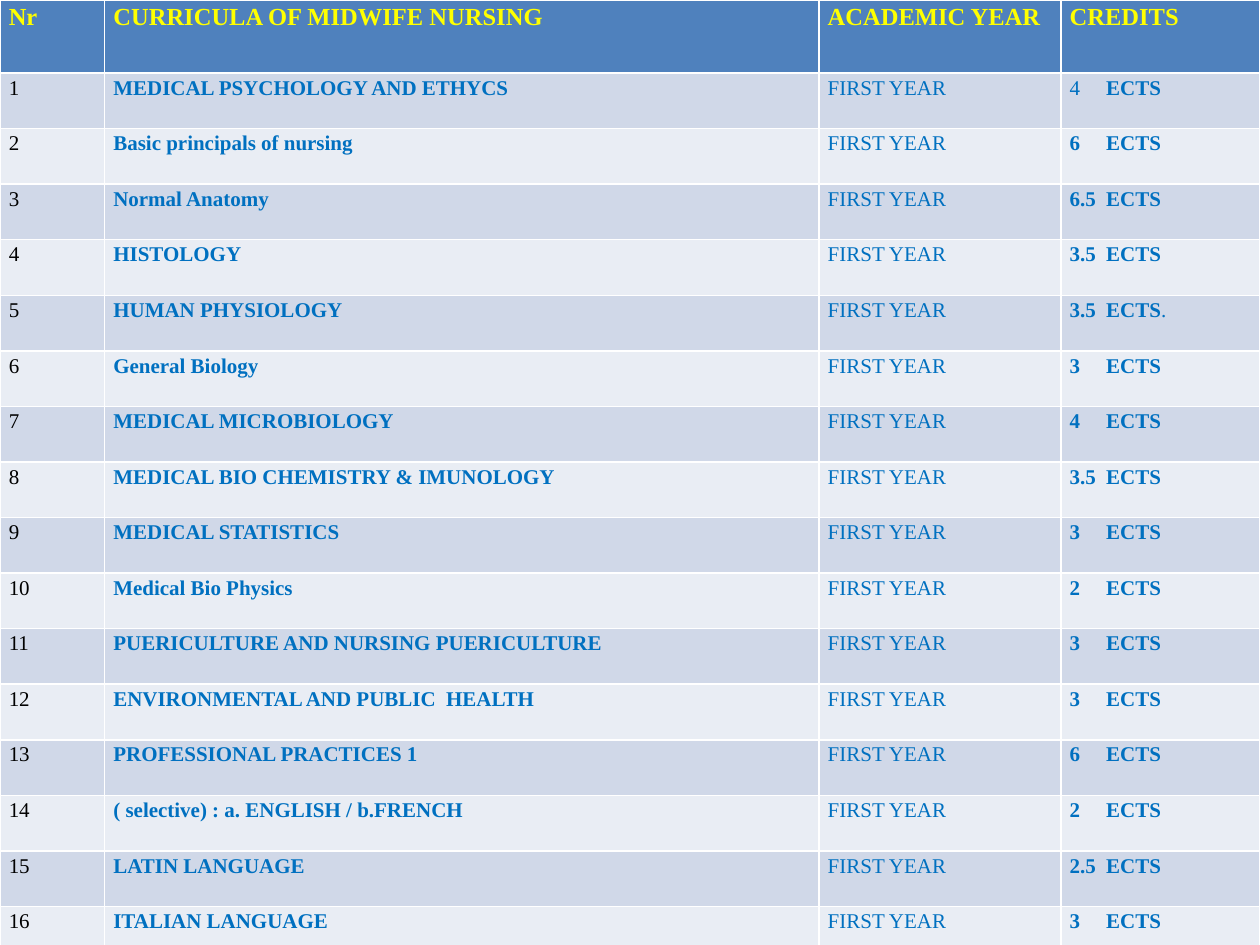
from lxml import etree
from pptx import Presentation
from pptx import util as u
from pptx.dml.color import RGBColor
from pptx.oxml.ns import qn

HEADERS = ["Nr", "CURRICULA OF MIDWIFE NURSING", "ACADEMIC YEAR", "CREDITS"]
YEAR = "FIRST YEAR"
COURSES = [
    ("MEDICAL PSYCHOLOGY AND ETHYCS", "4"),
    ("Basic principals of nursing", "6"),
    ("Normal Anatomy", "6.5"),
    ("HISTOLOGY", "3.5"),
    ("HUMAN PHYSIOLOGY", "3.5"),
    ("General Biology", "3"),
    ("MEDICAL MICROBIOLOGY", "4"),
    ("MEDICAL BIO CHEMISTRY & IMUNOLOGY", "3.5"),
    ("MEDICAL STATISTICS", "3"),
    ("Medical Bio Physics", "2"),
    ("PUERICULTURE AND NURSING PUERICULTURE", "3"),
    ("ENVIRONMENTAL AND PUBLIC  HEALTH", "3"),
    ("PROFESSIONAL PRACTICES 1", "6"),
    ("( selective) : a. ENGLISH / b.FRENCH", "2"),
    ("LATIN LANGUAGE", "2.5"),
    ("ITALIAN LANGUAGE", "3"),
]
# Credits set in mixed weight, by course number: (text, bold) spans
MIXED_CREDITS = {
    1: [("4", False), ("\tECTS", True)],
    5: [("3.5\tECTS", True), (".", False)],
}
COLORS = {"header": "4F81BD", "header_text": "FFFF00", "odd": "D0D8E8",
          "even": "E9EDF4", "number": "000000", "body": "0070C0"}
FONT = "Times New Roman"
COLUMN_WIDTHS = [0.83, 5.67, 1.92, 1.58]
TABLE_HEIGHT, HEADER_HEIGHT = 7.64, 0.58
UNIT_TAB = 0.29


def color(name):
    return RGBColor.from_string(COLORS[name])


def fill_cell(cell, spans, size, text_color, background):
    """Write (text, bold) spans into a cell and format it."""
    cell.margin_left = cell.margin_right = u.Inches(0.07)
    cell.margin_top = cell.margin_bottom = 0
    cell.fill.solid()
    cell.fill.fore_color.rgb = color(background)
    para = cell.text_frame.paragraphs[0]
    para.line_spacing = 1.15
    for words, bold in spans:
        span = para.add_run()
        span.text = words
        span.font.name = FONT
        span.font.size = u.Pt(size)
        span.font.bold = bold
        span.font.color.rgb = color(text_color)


def add_tab_stop(cell, position):
    properties = cell.text_frame.paragraphs[0]._p.get_or_add_pPr()
    stops = etree.SubElement(properties, qn("a:tabLst"))
    etree.SubElement(stops, qn("a:tab"), pos=str(u.Inches(position)), algn="l")


def main():
    deck = Presentation()
    deck.slide_width, deck.slide_height = u.Inches(10), u.Inches(7.5)
    page = deck.slides.add_slide(deck.slide_layouts[6])
    table = page.shapes.add_table(
        len(COURSES) + 1, len(HEADERS), 0, 0,
        u.Inches(sum(COLUMN_WIDTHS)), u.Inches(TABLE_HEIGHT)).table

    for column, width in zip(table.columns, COLUMN_WIDTHS):
        column.width = u.Inches(width)
    course_height = (TABLE_HEIGHT - HEADER_HEIGHT) / len(COURSES)
    for index, row in enumerate(table.rows):
        row.height = u.Inches(course_height if index else HEADER_HEIGHT)

    for column, heading in enumerate(HEADERS):
        fill_cell(table.cell(0, column), [(heading, True)], 14, "header_text", "header")

    for number, (course, credits) in enumerate(COURSES, start=1):
        background = "odd" if number % 2 else "even"
        credit_spans = MIXED_CREDITS.get(number, [(f"{credits}\tECTS", True)])
        contents = [[(str(number), False)], [(course, True)], [(YEAR, False)], credit_spans]
        for column, spans in enumerate(contents):
            text_color = "body" if column else "number"
            fill_cell(table.cell(number, column), spans, 12, text_color, background)
        add_tab_stop(table.cell(number, 3), UNIT_TAB)

    deck.save("out.pptx")


if __name__ == "__main__":
    main()
